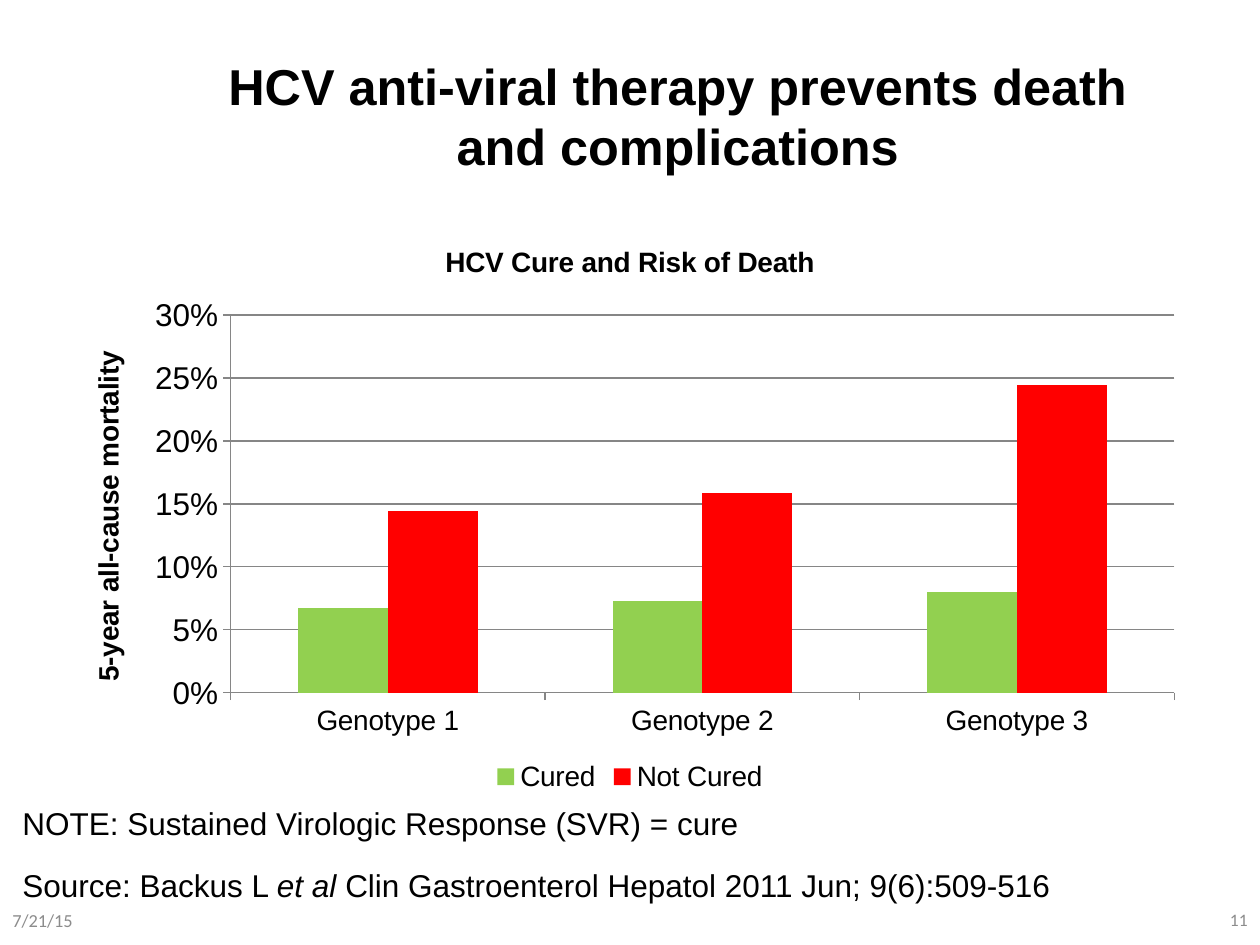
from lxml import etree
from pptx import Presentation
from pptx.chart.data import CategoryChartData
from pptx.dml.color import RGBColor
from pptx.enum.chart import XL_CHART_TYPE, XL_LEGEND_POSITION, XL_TICK_MARK
from pptx.enum.text import MSO_ANCHOR, PP_ALIGN
from pptx.util import Inches, Pt

TOP, MIDDLE = MSO_ANCHOR.TOP, MSO_ANCHOR.MIDDLE
LEFT, CENTER, RIGHT = PP_ALIGN.LEFT, PP_ALIGN.CENTER, PP_ALIGN.RIGHT
COLUMNS = XL_CHART_TYPE.COLUMN_CLUSTERED
BOTTOM = XL_LEGEND_POSITION.BOTTOM
OUTSIDE, NO_TICK = XL_TICK_MARK.OUTSIDE, XL_TICK_MARK.NONE
BLACK, GRAY, AXIS_GRAY = "000000", "8C8C8C", "868686"

prs = Presentation()
prs.slide_width, prs.slide_height = Inches(10), Inches(7.5)
slide = prs.slides.add_slide(prs.slide_layouts[6])


def style(font, size, color=BLACK, name="Arial", bold=False, italic=False):
    font.size, font.name, font.bold, font.italic = Pt(size), name, bold, italic
    font.color.rgb = RGBColor.from_string(color)


def add_text(text, box, align=LEFT, anchor=MIDDLE, **font_format):
    """Add a wrapped text box; parts of the text between asterisks are italic."""
    frame = slide.shapes.add_textbox(*map(Inches, box)).text_frame
    frame.word_wrap, frame.vertical_anchor = True, anchor
    paragraph = frame.paragraphs[0]
    paragraph.alignment = align
    for i, part in enumerate(text.split("*")):
        run = paragraph.add_run()
        run.text = part
        style(run.font, italic=i % 2 == 1, **font_format)


add_text("HCV anti-viral therapy prevents death and complications",
         (1.42, 0.33, 7.92, 1.17), align=CENTER, size=28.8, bold=True)

# Mortality chart
mortality = CategoryChartData(number_format="0%")
mortality.categories = ["Genotype 1", "Genotype 2", "Genotype 3"]
mortality.add_series("Cured", (0.067, 0.073, 0.08))
mortality.add_series("Not Cured", (0.144, 0.159, 0.244))
chart = slide.shapes.add_chart(
    COLUMNS, *map(Inches, (0.5, 1.75, 9, 4.58)), mortality).chart
style(chart.font, 18)

genotypes, rates = chart.category_axis, chart.value_axis
rates.minimum_scale, rates.maximum_scale, rates.major_unit = 0, 0.3, 0.05
rates.tick_labels.number_format = "0%"
rates.tick_labels.number_format_is_linked = False
rates.has_major_gridlines = True
style(genotypes.tick_labels.font, 16)
for axis in (genotypes, rates):
    axis.major_tick_mark, axis.minor_tick_mark = OUTSIDE, NO_TICK
for ruled in (genotypes, rates, rates.major_gridlines):
    ruled.format.line.color.rgb = RGBColor.from_string(AXIS_GRAY)
    ruled.format.line.width = Pt(0.75)

for titled, title in ((chart.chart_title, "HCV Cure and Risk of Death"),
                      (rates.axis_title, "5-year all-cause mortality")):
    titled.text_frame.text = title
    style(titled.text_frame.paragraphs[0].runs[0].font, 16, bold=True)
    etree.SubElement(titled._element, titled._element.tag.split("}")[0] + "}overlay", val="0") \
        if titled._element.find("{*}overlay") is None else None

chart.has_legend = True
chart.legend.position, chart.legend.include_in_layout = BOTTOM, False
style(chart.legend.font, 16)

bars = chart.plots[0]
bars.gap_width, bars.overlap, bars.vary_by_categories = 150, 0, False
for series, color in zip(bars.series, ("92D050", "FF0000")):
    series.invert_if_negative = False
    series.format.fill.solid()
    series.format.fill.fore_color.rgb = RGBColor.from_string(color)

# Notes below the chart and footer
add_text("Source: Backus L *et al *Clin Gastroenterol Hepatol 2011 Jun; 9(6):509-516",
         (0.08, 6.82, 8.99, 0.4), size=18)
add_text("NOTE: Sustained Virologic Response (SVR) = cure",
         (0.08, 6.33, 9.42, 0.4), anchor=TOP, size=18)
add_text("11", (7.67, 7.1, 2.33, 0.4), align=RIGHT, size=10, color=GRAY, name="Calibri")
add_text("7/21/15", (0, 7.1, 2.33, 0.4), size=10.5, color=GRAY, name="Calibri")

prs.save("out.pptx")
